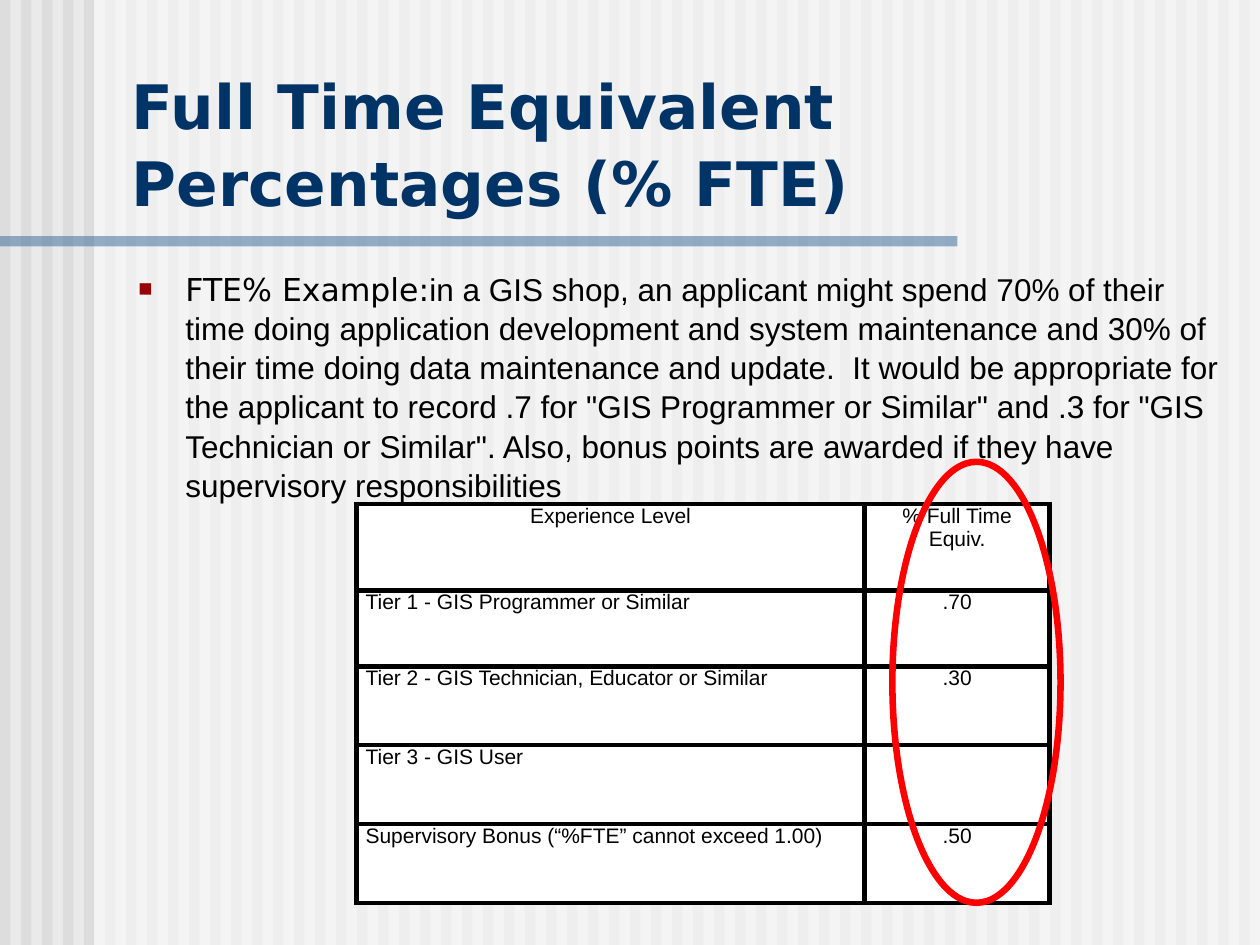
from dataclasses import dataclass

from lxml.etree import SubElement
from pptx import Presentation
from pptx.dml.color import RGBColor as RGB
from pptx.enum.shapes import MSO_SHAPE as Shape
from pptx.enum.text import MSO_ANCHOR as Anchor, PP_ALIGN as Align
from pptx.oxml.ns import qn
from pptx.util import Cm, Pt


@dataclass(frozen=True)
class Theme:
    background: str = "EAEAEA"
    stripe: str = "DDDDDD"
    white: str = "FFFFFF"
    rule: str = "336699"
    title: str = "003366"
    text: str = "000000"
    bullet: str = "9A0000"
    highlight: str = "FF0000"
    heading_font: str = "DejaVu Sans"
    body_font: str = "Arial"
    title_size: int = 35
    body_size: int = 18
    table_size: int = 12
    border_width: float = 3
    highlight_width: float = 3.75


THEME = Theme()
WIDTH, HEIGHT = 25.4, 19.05
STRIPE_COUNT = 60

TITLE = "Full Time Equivalent Percentages (% FTE)"
EXAMPLE_LABEL = "FTE% Example:"
EXAMPLE = (
    "in a GIS shop, an applicant might spend 70% of their time doing "
    "application development and system maintenance and 30% of their time "
    "doing data maintenance and update.  It would be appropriate for the "
    'applicant to record .7 for "GIS Programmer or Similar" and .3 for '
    '"GIS Technician or Similar". Also, bonus points are awarded if they '
    "have supervisory responsibilities"
)
ROWS = [
    ("Experience Level", "% Full Time Equiv."),
    ("Tier 1 - GIS Programmer or Similar", ".70"),
    ("Tier 2 - GIS Technician, Educator or Similar", ".30"),
    ("Tier 3 - GIS User", ""),
    ("Supervisory Bonus (“%FTE” cannot exceed 1.00)", ".50"),
]
COLUMN_WIDTHS = [10.24, 3.73]
ROW_HEIGHTS = [1.74, 1.53, 1.59, 1.59, 1.59]


def lengths(*values):
    return [Cm(value) for value in values]


def style_font(font, name, size, color, bold=False):
    font.name, font.size, font.bold = name, Pt(size), bold
    font.color.rgb = RGB.from_string(color)


def add_bar(slide, left, top, width, height, color, opacity=100):
    bar = slide.shapes.add_shape(Shape.RECTANGLE, *lengths(left, top, width, height))
    bar.shadow.inherit = False
    bar.line.fill.background()
    bar.fill.solid()
    bar.fill.fore_color.rgb = RGB.from_string(color)
    if opacity < 100:
        color_element = bar.fill._xPr.find(".//" + qn("a:srgbClr"))
        SubElement(color_element, qn("a:alpha"), val=str(opacity * 1000))


def add_backdrop(slide):
    slide.background.fill.solid()
    slide.background.fill.fore_color.rgb = RGB.from_string(THEME.background)
    pitch = WIDTH / STRIPE_COUNT
    for index in range(STRIPE_COUNT):
        add_bar(slide, index * pitch, 0, pitch / 2, HEIGHT, THEME.stripe)
    add_bar(slide, 1.9, 0, WIDTH - 1.9, HEIGHT, THEME.white, opacity=50)
    add_bar(slide, 0, 4.76, 19.3, 0.21, THEME.rule, opacity=50)


def add_text_box(slide, left, top, width, height, anchor):
    box = slide.shapes.add_textbox(*lengths(left, top, width, height))
    box.text_frame.word_wrap = True
    box.text_frame.vertical_anchor = anchor
    return box.text_frame.paragraphs[0]


def add_title(slide):
    para = add_text_box(slide, 2.41, 1.3, 22.68, 3.23, Anchor.BOTTOM)
    para.text = TITLE
    para.line_spacing = 1.05
    style_font(para.runs[0].font, THEME.heading_font, THEME.title_size,
               THEME.title, bold=True)


def add_bullet(para, indent):
    properties = para._p.get_or_add_pPr()
    properties.set("marL", str(Cm(indent)))
    properties.set("indent", str(-Cm(indent)))
    color = SubElement(properties, qn("a:buClr"))
    SubElement(color, qn("a:srgbClr"), val=THEME.bullet)
    SubElement(properties, qn("a:buSzPct"), val="75000")
    SubElement(properties, qn("a:buFont"), typeface=THEME.body_font)
    SubElement(properties, qn("a:buChar"), char="■")


def add_example(slide):
    para = add_text_box(slide, 2.54, 5.28, 22.53, 11.63, Anchor.TOP)
    add_bullet(para, 0.95)
    para.line_spacing = 1.04
    for text, font_name in [(EXAMPLE_LABEL, THEME.heading_font),
                            (EXAMPLE, THEME.body_font)]:
        span = para.add_run()
        span.text = text
        style_font(span.font, font_name, THEME.body_size, THEME.text)


def add_borders(cell):
    """Draw all four sides; borders must precede the cell's fill in the XML."""
    properties = cell._tc.get_or_add_tcPr()
    for side in ("a:lnL", "a:lnR", "a:lnT", "a:lnB"):
        line = SubElement(properties, qn(side), w=str(Pt(THEME.border_width)))
        fill = SubElement(line, qn("a:solidFill"))
        SubElement(fill, qn("a:srgbClr"), val=THEME.text)


def fill_cell(cell, text, centered):
    add_borders(cell)
    cell.fill.solid()
    cell.fill.fore_color.rgb = RGB.from_string(THEME.white)
    cell.margin_left = cell.margin_right = Cm(0.18)
    cell.margin_top = cell.margin_bottom = 0
    para = cell.text_frame.paragraphs[0]
    para.text = text
    para.alignment = Align.CENTER if centered else Align.LEFT
    for span in para.runs:
        style_font(span.font, THEME.body_font, THEME.table_size, THEME.text)


def add_experience_table(slide):
    frame = slide.shapes.add_table(
        len(ROWS), len(COLUMN_WIDTHS),
        *lengths(7.19, 10.16, sum(COLUMN_WIDTHS), sum(ROW_HEIGHTS)))
    table = frame.table
    for column, width in zip(table.columns, COLUMN_WIDTHS):
        column.width = Cm(width)
    for row, height in zip(table.rows, ROW_HEIGHTS):
        row.height = Cm(height)
    for row_index, row in enumerate(ROWS):
        for column_index, text in enumerate(row):
            fill_cell(table.cell(row_index, column_index), text,
                      centered=row_index == 0 or column_index == 1)


def add_highlight(slide):
    ring = slide.shapes.add_shape(Shape.OVAL, *lengths(17.99, 9.31, 3.39, 8.89))
    ring.shadow.inherit = False
    ring.fill.background()
    ring.line.color.rgb = RGB.from_string(THEME.highlight)
    ring.line.width = Pt(THEME.highlight_width)


def main():
    deck = Presentation()
    deck.slide_width, deck.slide_height = lengths(WIDTH, HEIGHT)
    slide = deck.slides.add_slide(deck.slide_layouts[6])
    add_backdrop(slide)
    add_experience_table(slide)
    add_title(slide)
    add_example(slide)
    add_highlight(slide)
    deck.save("out.pptx")


if __name__ == "__main__":
    main()
